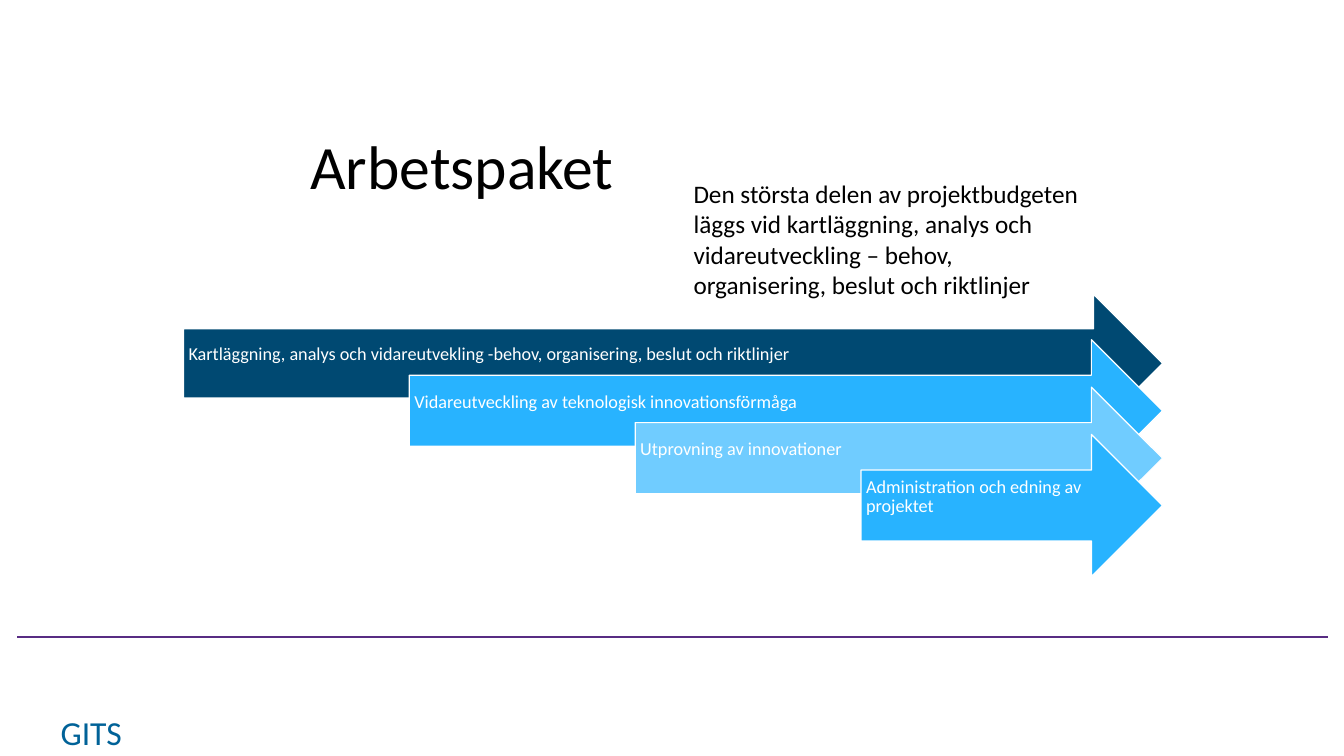
"""Build the work package slide with its four stepped arrows."""
from pptx import Presentation
from pptx.dml.color import RGBColor as Rgb
from pptx.enum.shapes import MSO_CONNECTOR as Link, MSO_SHAPE as Shape
from pptx.enum.text import MSO_ANCHOR as Anchor, PP_ALIGN as Align
from pptx.util import Inches, Pt
from lxml.etree import SubElement
from pptx.oxml.ns import qn

INK = {
    "black": "000000", "white": "FFFFFF", "brand": "006298", "rule": "582C83",
    "navy": "004972", "blue": "28B3FF", "pale": "70CCFF",
}
STEPS = [
    ("Kartläggning, analys och vidareutvekling -behov, organisering, beslut och riktlinjer", "navy", 1.37),
    ("Vidareutveckling av teknologisk innovationsförmåga", "blue", 1.41),
    ("Utprovning av innovationer", "pale", 1.41),
    ("Administration och edning av projektet", "blue", 1.41),
]
LEFT, RIGHT, MID = 1.82, 11.53, 3.605
STEP_X, STEP_Y = 2.24, 0.47


def tint(name):
    return Rgb.from_string(INK[name])


def add_text(slide, box, words, size, ink, anchor=Anchor.TOP, align=Align.LEFT,
             pad=(0.1, 0.05, 0.1, 0.05), lead=1.0):
    frame = slide.shapes.add_textbox(*map(Inches, box)).text_frame
    frame.word_wrap = True
    frame.vertical_anchor = anchor
    frame.margin_left, frame.margin_top, frame.margin_right, frame.margin_bottom = map(Inches, pad)
    para = frame.paragraphs[0]
    para.alignment = align
    para.line_spacing = lead
    run = para.add_run()
    run.text = words
    run.font.name = "Calibri"
    run.font.size = Pt(size)
    run.font.color.rgb = tint(ink)


def add_rule(slide, left, right, top):
    line = slide.shapes.add_connector(
        Link.STRAIGHT, Inches(left), Inches(top), Inches(right), Inches(top))
    line.line.color.rgb = tint("rule")
    line.line.width = Pt(1)
    SubElement(line._element.spPr, qn("a:effectLst"))


def add_arrow(slide, left, mid, tall, words, ink):
    wide = RIGHT - left
    arrow = slide.shapes.add_shape(
        Shape.RIGHT_ARROW, *map(Inches, (left, mid - tall / 2, wide, tall)))
    arrow.shadow.inherit = False
    arrow.fill.solid()
    arrow.fill.fore_color.rgb = tint(ink)
    arrow.line.color.rgb = tint("white")
    arrow.line.width = Pt(0.85)
    add_text(slide, (left, mid - tall / 4, wide - tall / 4, tall / 2), words, 13, "white",
             Anchor.MIDDLE, pad=(0.05, 0.05, 0.28, 0.22), lead=0.9)


def main():
    deck = Presentation()
    deck.slide_width, deck.slide_height = Inches(13.33), Inches(7.5)
    slide = deck.slides.add_slide(deck.slide_layouts[6])
    add_text(slide, (0.47, 7.01, 0.87, 0.5), "GITS", 24, "brand", align=Align.CENTER)
    add_rule(slide, 0.17, 13.17, 6.32)
    add_text(slide, (2.98, 1.18, 7.06, 1.01), "Arbetspaket", 44, "black", Anchor.MIDDLE, lead=0.9)
    for i, (words, ink, tall) in enumerate(STEPS):
        add_arrow(slide, LEFT + i * STEP_X, MID + i * STEP_Y, tall, words, ink)
    add_text(slide, (6.78, 1.72, 4.11, 1.31),
             "Den största delen av projektbudgeten läggs vid kartläggning, analys och "
             "vidareutveckling – behov, organisering, beslut och riktlinjer", 18, "black")
    deck.save("out.pptx")


if __name__ == "__main__":
    main()
